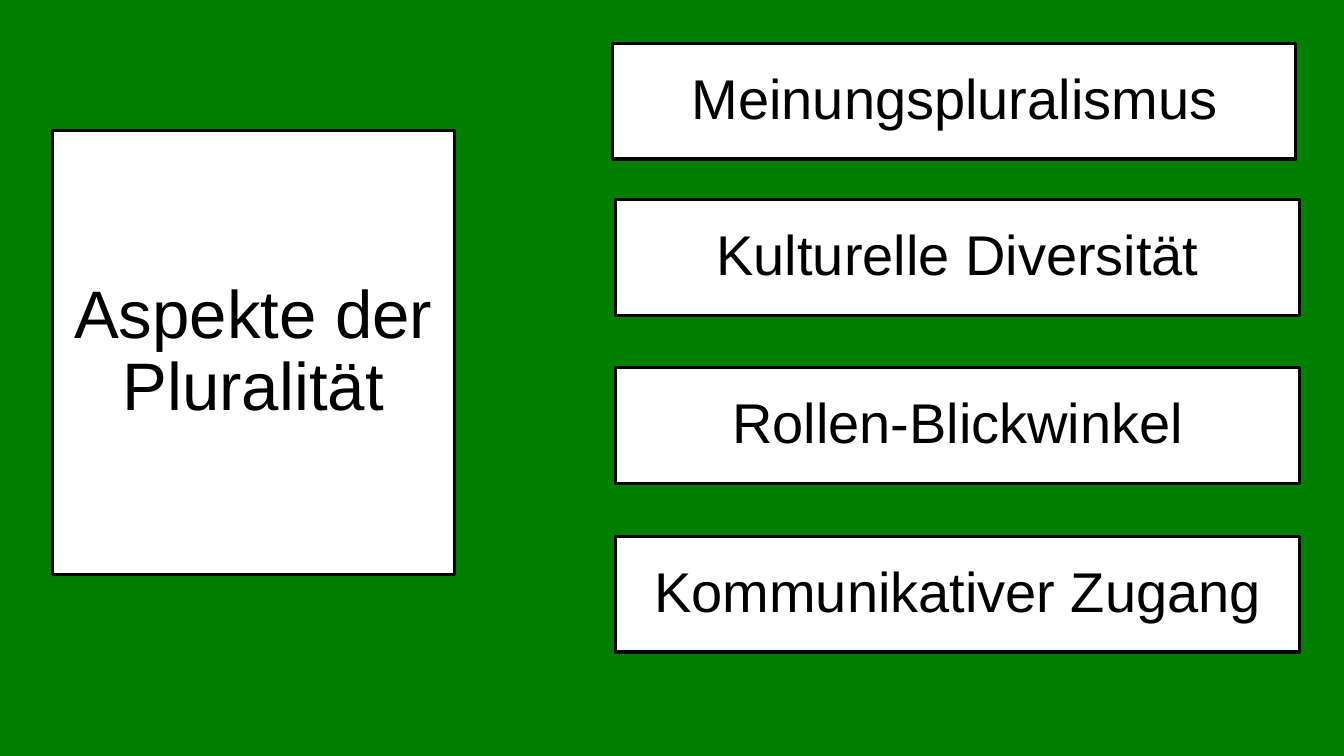
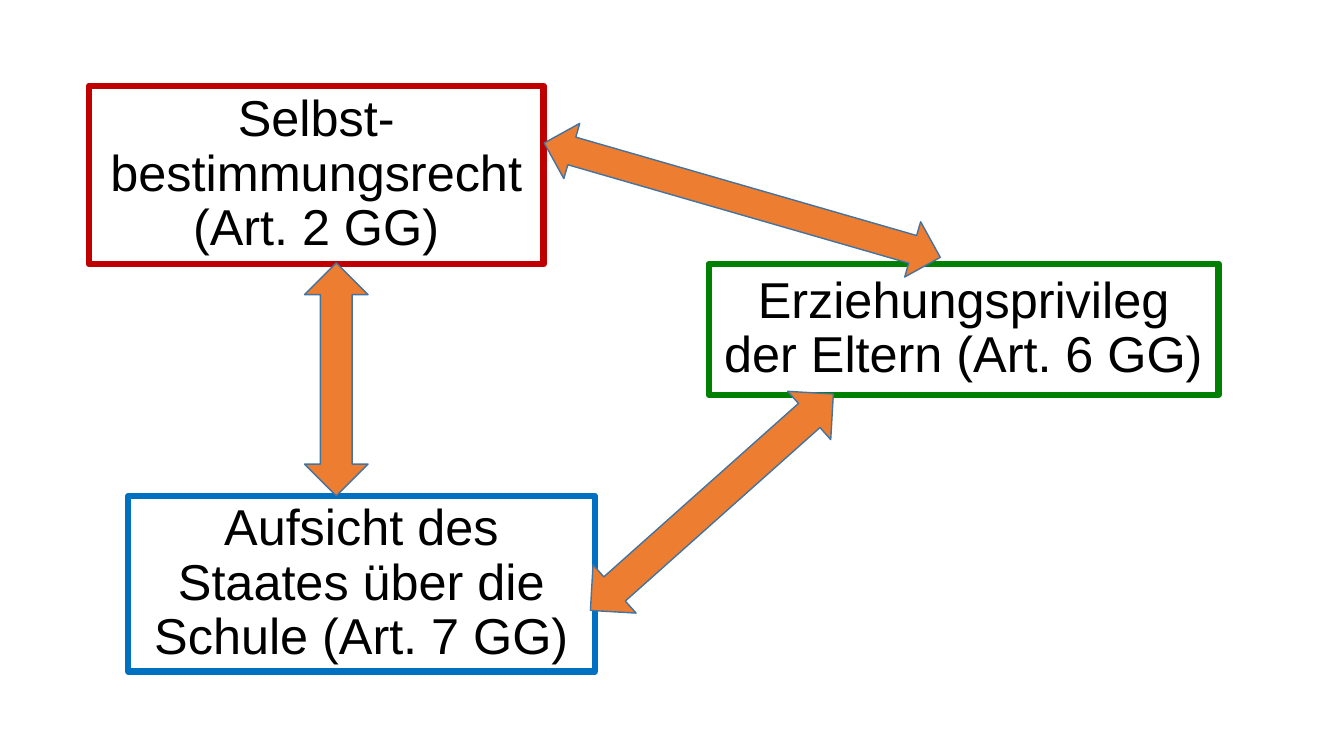
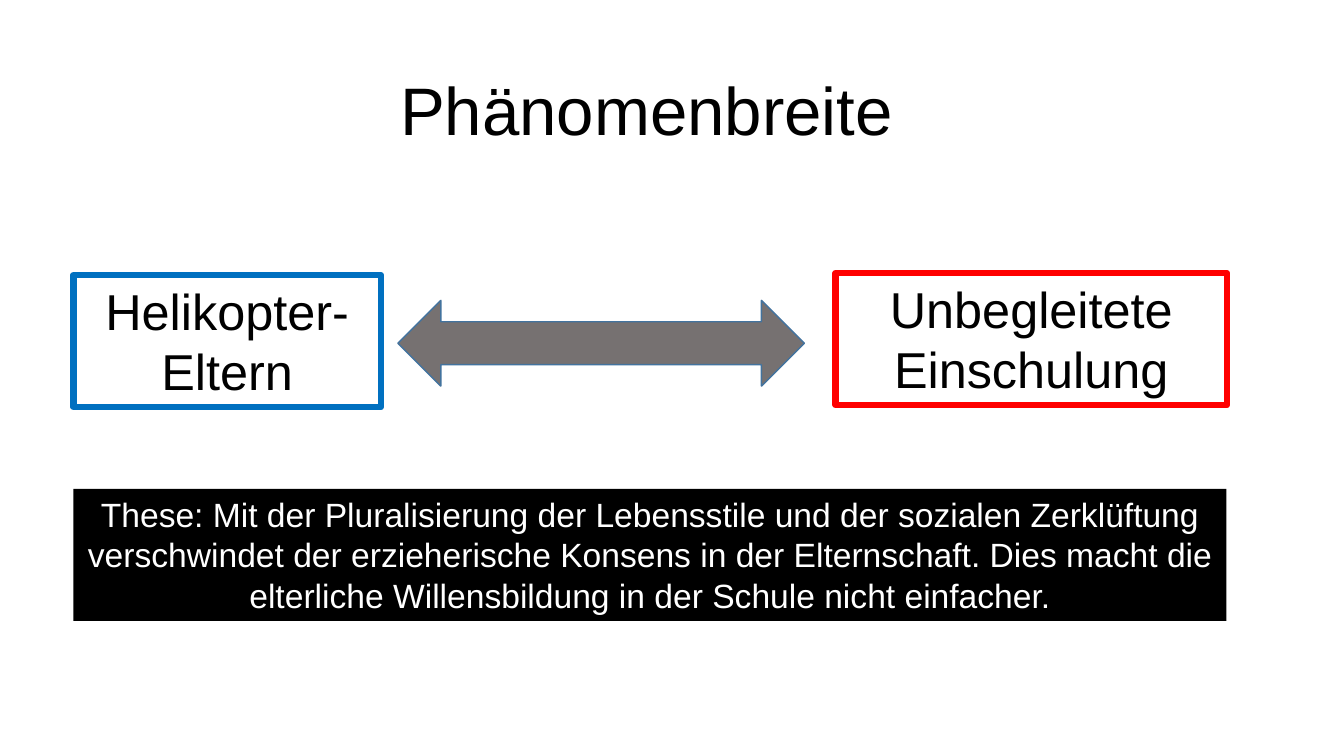
from pptx import Presentation
from pptx.dml.color import RGBColor
from pptx.enum.shapes import MSO_SHAPE
from pptx.enum.text import MSO_ANCHOR, PP_ALIGN
from pptx.util import Cm, Pt

FONT = "Arial"
BLACK, WHITE, GREEN = "000000", "FFFFFF", "008000"
BLUE, DARK_RED, RED = "0070C0", "C00000", "FF0000"
ORANGE, GREY, ARROW_EDGE = "ED7D31", "767171", "43739E"
TITLE_SIZE = 48


def rgb(value):
    return RGBColor.from_string(value)


def add_slide(prs, background=WHITE):
    s = prs.slides.add_slide(prs.slide_layouts[6])
    s.background.fill.solid()
    s.background.fill.fore_color.rgb = rgb(background)
    return s


def write_text(sp, text, size=36, color=BLACK, spacing=0.9, anchor=MSO_ANCHOR.MIDDLE):
    tf = sp.text_frame
    tf.word_wrap = True
    tf.vertical_anchor = anchor
    p = tf.paragraphs[0]
    p.alignment = PP_ALIGN.CENTER
    p.line_spacing = spacing
    r = p.add_run()
    r.text = text
    r.font.name = FONT
    r.font.size = Pt(size)
    r.font.color.rgb = rgb(color)


def add_figure(s, kind, at, fill=None, line=None, width=1):
    sp = s.shapes.add_shape(kind, *map(Cm, at))
    sp.shadow.inherit = False
    if fill:
        sp.fill.solid()
        sp.fill.fore_color.rgb = rgb(fill)
    else:
        sp.fill.background()
    if line:
        sp.line.color.rgb = rgb(line)
        sp.line.width = Pt(width)
    else:
        sp.line.fill.background()
    return sp


def add_box(s, text, at, fill=None, line=None, width=4.5, **text_format):
    sp = add_figure(s, MSO_SHAPE.RECTANGLE, at, fill, line, width)
    write_text(sp, text, **text_format)


def add_arrow(s, at, fill=ORANGE, rotation=0):
    sp = add_figure(s, MSO_SHAPE.LEFT_RIGHT_ARROW, at, fill, ARROW_EDGE)
    sp.rotation = rotation


def add_title(s, text, at):
    write_text(s.shapes.add_textbox(*map(Cm, at)), text, size=TITLE_SIZE)


def build_aspects(prs):
    s = add_slide(prs, GREEN)
    card = dict(fill=WHITE, line=BLACK, width=2.25)
    add_box(s, "Aspekte der Pluralität", (1.32, 3.3, 10.13, 11.18), size=TITLE_SIZE, **card)
    add_box(s, "Meinungspluralismus", (15.44, 1.09, 17.22, 2.92), size=40, **card)
    aspects = ("Kulturelle Diversität", "Rollen-Blickwinkel", "Kommunikativer Zugang")
    for i, aspect in enumerate(aspects):
        add_box(s, aspect, (15.52, 5.03 + i * 4.24, 17.22, 2.92), size=40, **card)


def build_rights(prs):
    s = add_slide(prs)
    rights = (
        ("Selbst-bestimmungsrecht (Art. 2 GG)", (2.24, 2.16, 11.46, 4.5), DARK_RED),
        ("Aufsicht des Staates über die Schule (Art. 7 GG)", (3.23, 12.5, 11.76, 4.42), BLUE),
        ("Erziehungsprivileg der Eltern (Art. 6 GG)", (17.86, 6.65, 12.85, 3.3), GREEN),
    )
    for text, at, line in rights:
        add_box(s, text, at, line=line)
    add_arrow(s, (13.51, 4.32, 10.39, 1.45), rotation=16.1)
    add_arrow(s, (5.54, 8.76, 5.87, 1.6), rotation=90)
    add_arrow(s, (13.84, 11.84, 8.2, 1.63), rotation=138.3)


def build_range(prs):
    s = add_slide(prs)
    plain = dict(spacing=1.0, anchor=MSO_ANCHOR.TOP)
    add_title(s, "Phänomenbreite", (9.6, 1.02, 13.39, 3.68))
    add_box(s, "Helikopter-Eltern", (1.85, 6.93, 7.75, 3.33), line=BLUE, **plain)
    add_box(s, "Unbegleitete Einschulung", (21.06, 6.88, 9.86, 3.33), line=RED, **plain)
    add_arrow(s, (10.03, 7.57, 10.24, 2.16), fill=GREY)
    thesis = (
        "These: Mit der Pluralisierung der Lebensstile und der sozialen Zerklüftung "
        "verschwindet der erzieherische Konsens in der Elternschaft. Dies macht die "
        "elterliche Willensbildung in der Schule nicht einfacher."
    )
    add_box(s, thesis, (1.85, 12.32, 29.06, 3.33), fill=BLACK, size=24, color=WHITE, **plain)


def main():
    prs = Presentation()
    prs.slide_width, prs.slide_height = Cm(33.87), Cm(19.05)
    build_aspects(prs)
    build_rights(prs)
    build_range(prs)
    prs.save("out.pptx")


if __name__ == "__main__":
    main()
